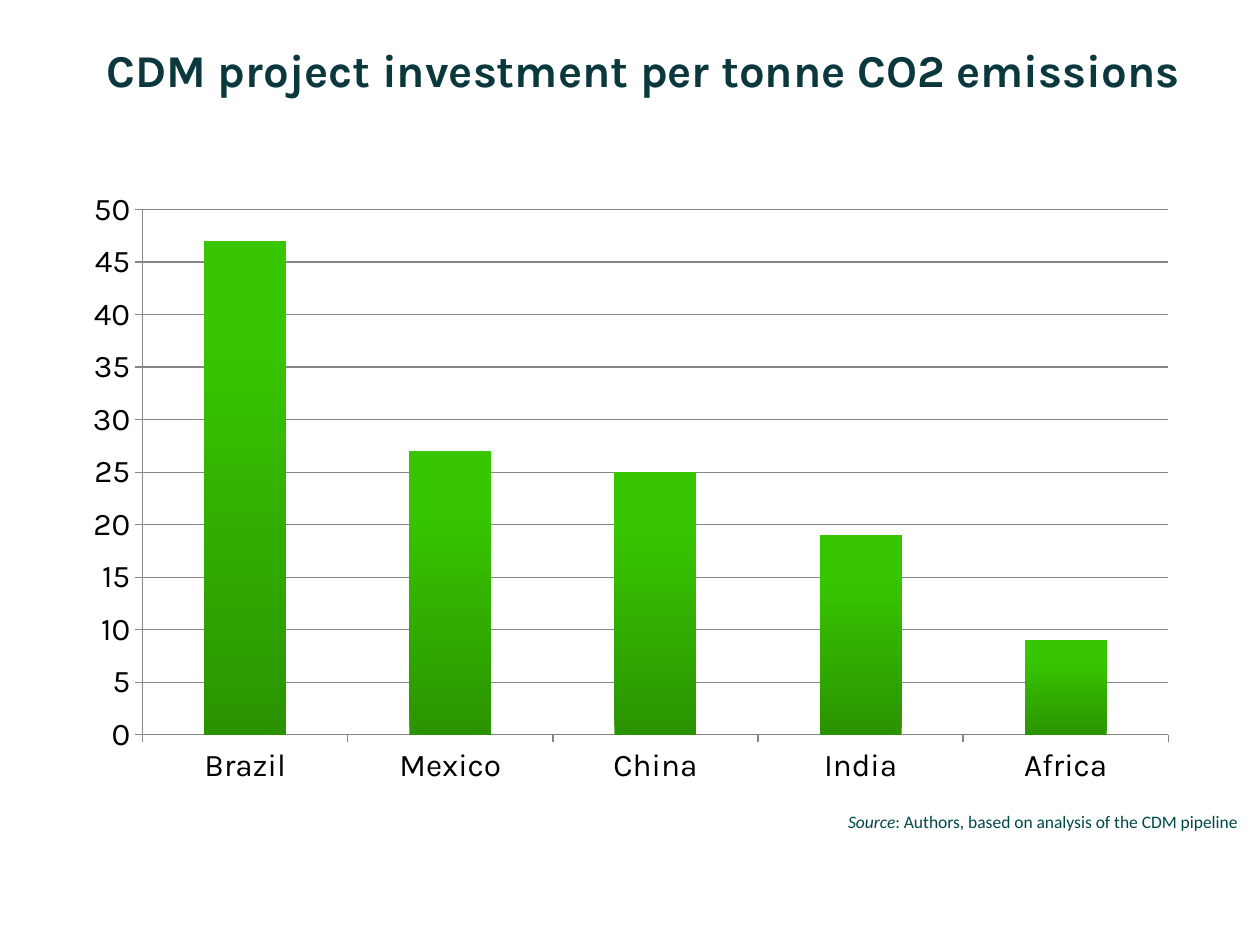
from dataclasses import dataclass

from pptx import Presentation
from pptx.chart.data import CategoryChartData
from pptx.dml.color import RGBColor
from pptx.enum import chart as ch, text
from pptx.util import Inches, Pt


@dataclass(frozen=True)
class Theme:
    title: str = "0A383C"
    source: str = "004846"
    label: str = "000000"
    line: str = "868686"
    bar_base: str = "2A9400"
    bar_top: str = "38C600"
    heading_font: str = "Karla"
    source_font: str = "Calibri"
    title_size: int = 26
    label_size: int = 18
    source_size: int = 10


theme = Theme()


def add_run(p, content, *, font, size, color, bold=False, italic=False):
    r = p.add_run()
    r.text = content
    r.font.name = font
    r.font.size = Pt(size)
    r.font.color.rgb = RGBColor.from_string(color)
    r.font.bold = bold
    r.font.italic = italic


prs = Presentation()
prs.slide_width, prs.slide_height = Inches(10), Inches(7.5)
s = prs.slides.add_slide(prs.slide_layouts[5])

# Title
title = s.shapes.title
title.left, title.top = Inches(0.56), Inches(0.33)
title.width, title.height = Inches(9.1), Inches(1.08)
tf = title.text_frame
tf.margin_left = tf.margin_top = tf.margin_right = tf.margin_bottom = 0
tf.vertical_anchor = text.MSO_ANCHOR.TOP
tf.auto_size = text.MSO_AUTO_SIZE.NONE
p = tf.paragraphs[0]
p.alignment = text.PP_ALIGN.CENTER
add_run(p, "CDM project investment per tonne CO2 emissions",
        font=theme.heading_font, size=theme.title_size, color=theme.title, bold=True)

# Investment chart
data = CategoryChartData()
data.categories = ["Brazil", "Mexico", "China", "India", "Africa"]
data.add_series("Series 1", [47, 27, 25, 19, 9])
chart = s.shapes.add_chart(ch.XL_CHART_TYPE.COLUMN_CLUSTERED, Inches(0.56), Inches(1.42),
                           Inches(8.89), Inches(4.9), data).chart
chart.has_legend = False
chart.has_title = False
chart.font.name = theme.heading_font
chart.font.size = Pt(theme.label_size)
chart.font.color.rgb = RGBColor.from_string(theme.label)

values = chart.value_axis
values.minimum_scale, values.maximum_scale, values.major_unit = 0, 50, 5
values.has_major_gridlines = True
for axis in (chart.category_axis, values):
    axis.major_tick_mark = ch.XL_TICK_MARK.OUTSIDE
    axis.minor_tick_mark = ch.XL_TICK_MARK.NONE
for part in (chart.category_axis, values, values.major_gridlines):
    part.format.line.color.rgb = RGBColor.from_string(theme.line)
    part.format.line.width = Pt(0.75)

plot = chart.plots[0]
plot.gap_width = 150
plot.vary_by_categories = False
fill = plot.series[0].format.fill
fill.gradient()
fill.gradient_angle = 90
for stop, color, position in zip(fill.gradient_stops, (theme.bar_base, theme.bar_top), (0, 0.8)):
    stop.color.rgb = RGBColor.from_string(color)
    stop.position = position

# Source line
source = s.shapes.add_textbox(Inches(4.49), Inches(6.39), Inches(5.43), Inches(0.27))
tf = source.text_frame
tf.word_wrap = True
tf.auto_size = text.MSO_AUTO_SIZE.SHAPE_TO_FIT_TEXT
p = tf.paragraphs[0]
p.alignment = text.PP_ALIGN.RIGHT
for content, italic in (("Source", True), (": Authors, based on analysis of the CDM pipeline", False)):
    add_run(p, content, font=theme.source_font, size=theme.source_size,
            color=theme.source, italic=italic)

prs.save("out.pptx")
